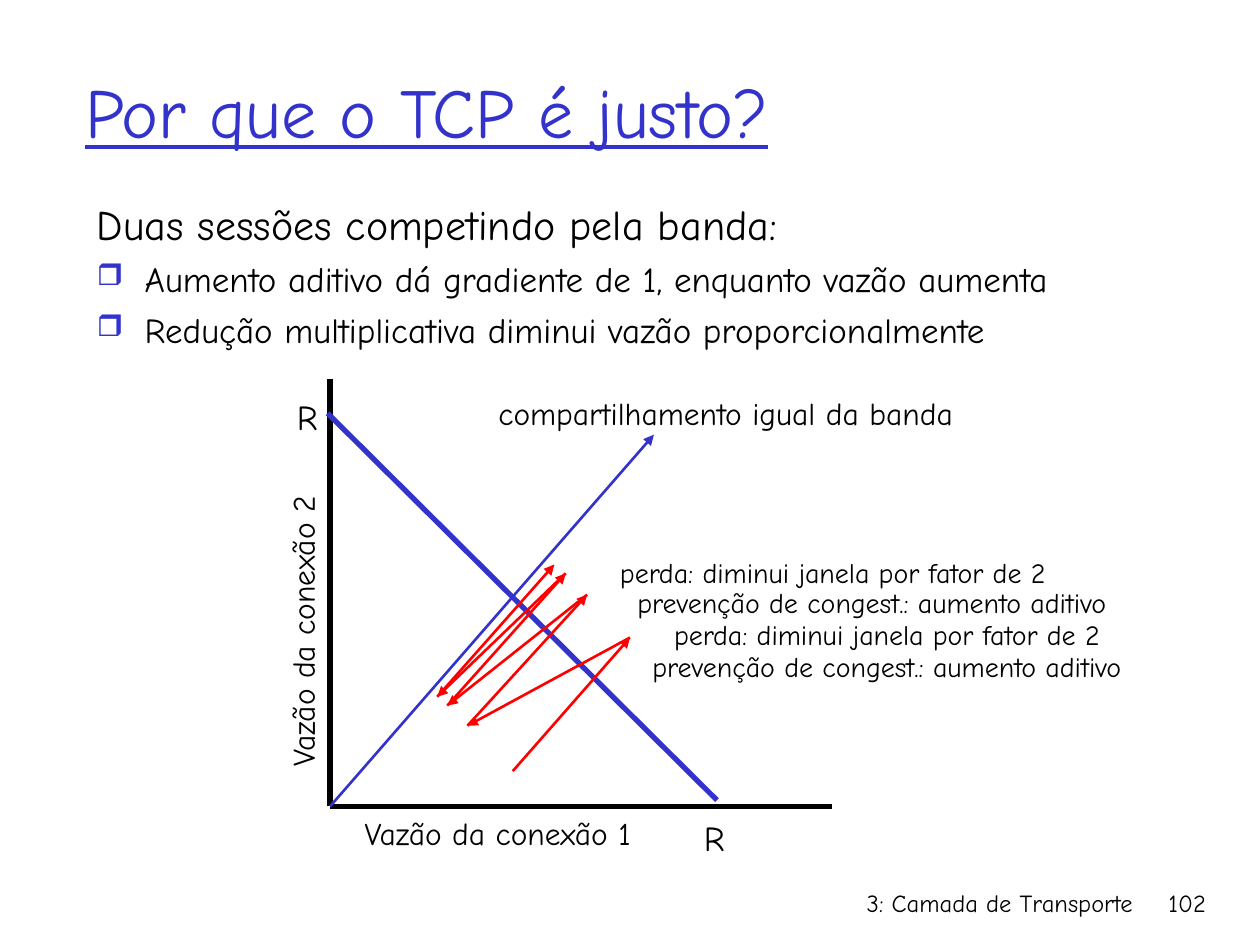
"""Build the slide on why TCP shares bandwidth fairly."""
import itertools

import lxml.etree
import pptx
import pptx.dml.color
import pptx.enum.shapes
import pptx.enum.text
import pptx.oxml.ns
import pptx.util

Inches = pptx.util.Inches
Pt = pptx.util.Pt
ALIGN = pptx.enum.text.PP_ALIGN
ANCHOR = pptx.enum.text.MSO_ANCHOR
qn = pptx.oxml.ns.qn

FONT = "Comic Neue"
COLORS = {"ink": "000000", "accent": "3333CC", "window": "FF0000"}


def rgb(name):
    """Return the named colour."""
    return pptx.dml.color.RGBColor.from_string(COLORS[name])


def style(paragraph, size, color="ink", align=ALIGN.LEFT):
    """Set the look of a whole paragraph."""
    paragraph.alignment = align
    paragraph.font.name = FONT
    paragraph.font.size = Pt(size)
    paragraph.font.color.rgb = rgb(color)


def add_frame(slide, left, top, width, height):
    """Add a wrapping text box and return it."""
    box = slide.shapes.add_textbox(
        Inches(left), Inches(top), Inches(width), Inches(height))
    box.text_frame.word_wrap = True
    return box


def add_label(slide, text, place, size, align=ALIGN.CENTER, rotation=0):
    """Add a one-line label."""
    label = add_frame(slide, *place)
    label.rotation = rotation
    line = label.text_frame.paragraphs[0]
    line.text = text
    style(line, size, align=align)


def add_title(slide, text):
    """Add the underlined heading."""
    frame = add_frame(slide, 0.58, 0.25, 8.5, 1.25).text_frame
    frame.vertical_anchor = ANCHOR.MIDDLE
    heading = frame.paragraphs[0]
    heading.text = text
    style(heading, 40, "accent")
    heading.font.underline = True


def add_bullet(paragraph):
    """Give a paragraph a hanging box bullet."""
    properties = paragraph._p.get_or_add_pPr()
    properties.set("marL", str(Inches(0.38)))
    properties.set("indent", str(-Inches(0.38)))
    color = lxml.etree.SubElement(properties, qn("a:buClr"))
    lxml.etree.SubElement(color, qn("a:srgbClr"), val=COLORS["accent"])
    lxml.etree.SubElement(properties, qn("a:buSzPct"), val="85000")
    lxml.etree.SubElement(properties, qn("a:buChar"), char="❒")


def add_body(slide, lead, points):
    """Add the lead sentence and its bulleted points."""
    frame = add_frame(slide, 0.67, 1.53, 9.08, 1.4).text_frame
    frame.paragraphs[0].text = lead
    style(frame.paragraphs[0], 24)
    for text in points:
        point = frame.add_paragraph()
        point.text = text
        add_bullet(point)
        point.space_before = Pt(4.8)
        style(point, 20)


def add_line(slide, start, end, color, width, arrow=False):
    """Add a straight line, with an arrowhead at its end if asked."""
    line = slide.shapes.add_connector(
        pptx.enum.shapes.MSO_CONNECTOR.STRAIGHT,
        *(Inches(value) for value in start + end))
    line.line.color.rgb = rgb(color)
    line.line.width = Pt(width)
    if arrow:
        lxml.etree.SubElement(
            line.line._get_or_add_ln(), qn("a:tailEnd"), type="triangle")
    lxml.etree.SubElement(line._element.spPr, qn("a:effectLst"))


def add_graph(slide):
    """Draw the axes, the capacity line, the fair share and the window path."""
    origin = (2.62, 6.4)
    add_line(slide, origin, (6.6, 6.4), "ink", 3)
    add_line(slide, origin, (2.62, 3.01), "ink", 3)
    add_line(slide, origin, (5.19, 3.45), "accent", 1.5, arrow=True)
    add_line(slide, (2.6, 3.28), (5.69, 6.35), "accent", 3)
    window_path = [(4.07, 6.12), (5, 5.06), (3.71, 5.76), (4.66, 4.72),
                   (3.55, 5.6), (4.49, 4.55), (3.47, 5.53), (4.4, 4.48)]
    for start, end in itertools.pairwise(window_path):
        add_line(slide, start, end, "window", 1.5, arrow=True)


def add_graph_labels(slide):
    """Label the axes, the fair share and the steps of the window path."""
    for left, top in ((2.22, 3.09), (5.45, 6.43)):
        add_label(slide, "R", (left, top, 0.44, 0.43), 20)
    add_label(slide, "compartilhamento igual da banda",
              (3.56, 3.08, 4.4, 0.4), 18)
    add_label(slide, "Vazão da conexão 1", (2.01, 6.41, 3.88, 0.4), 18)
    add_label(slide, "Vazão da conexão 2", (0.46, 4.81, 3.88, 0.4), 18,
              rotation=270)
    increase = "prevenção de congest.: aumento aditivo"
    loss = "perda: diminui janela por fator de 2"
    steps = [(loss, 4.67, 4.36, 3.88), (increase, 4.44, 4.6, 4.96),
             (loss, 5.1, 4.85, 3.88), (increase, 4.56, 5.11, 4.96)]
    for text, left, top, width in steps:
        add_label(slide, text, (left, top, width, 0.37), 16)


def main():
    """Build and save the slide."""
    deck = pptx.Presentation()
    deck.slide_width, deck.slide_height = Inches(10), Inches(7.5)
    slide = deck.slides.add_slide(deck.slide_layouts[6])
    add_title(slide, "Por que o TCP é justo?")
    add_body(slide, "Duas sessões competindo pela banda:", [
        "Aumento aditivo dá gradiente de 1, enquanto vazão aumenta",
        "Redução multiplicativa diminui vazão proporcionalmente"])
    add_graph(slide)
    add_graph_labels(slide)
    add_label(slide, "3: Camada de Transporte", (5.92, 7, 3.17, 0.5), 14,
              ALIGN.RIGHT)
    add_label(slide, "102", (8.93, 7, 0.74, 0.5), 14, ALIGN.RIGHT)
    deck.save("out.pptx")


if __name__ == "__main__":
    main()
